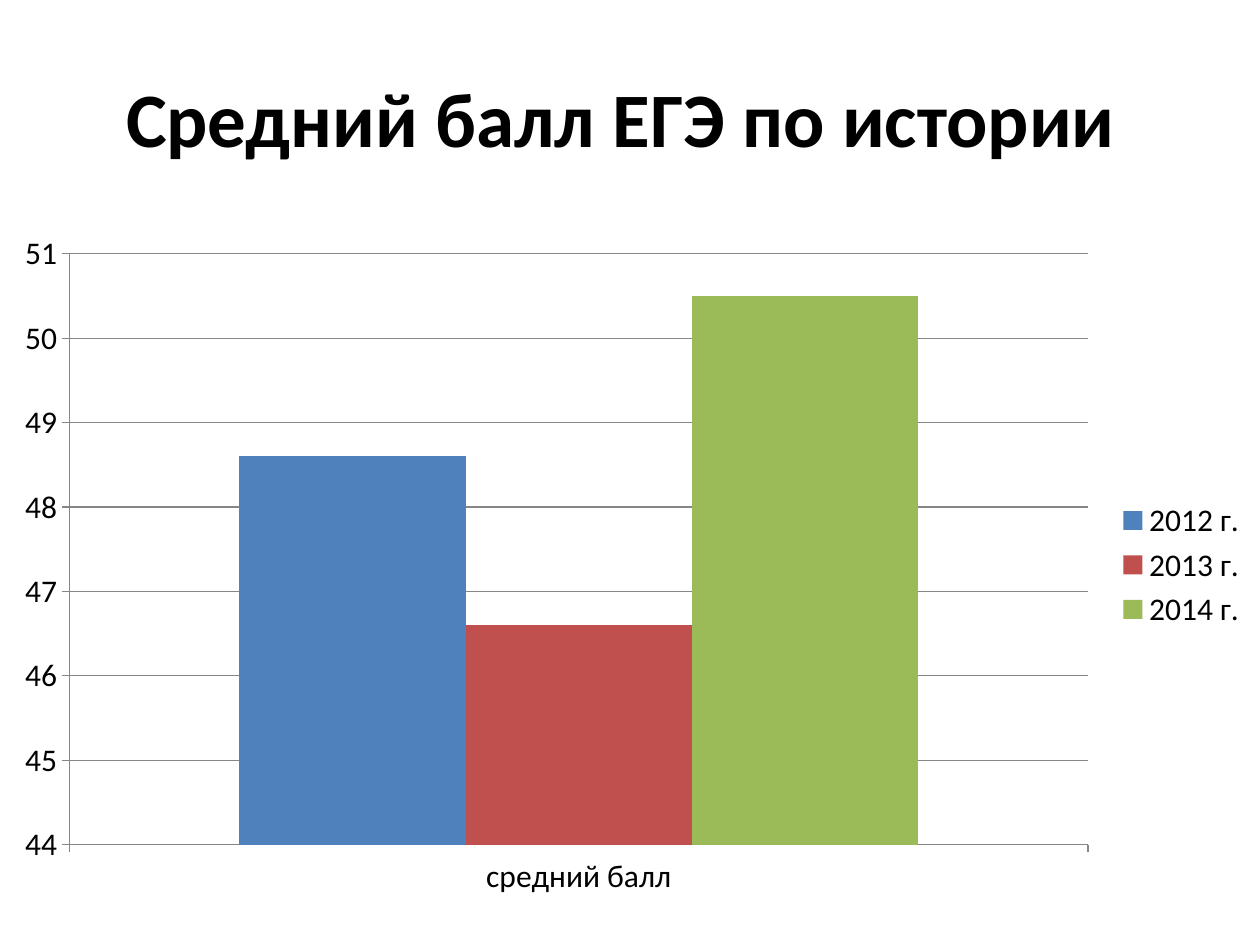
from pptx import Presentation
from pptx.chart.data import CategoryChartData
from pptx.dml.color import RGBColor
from pptx.enum.chart import XL_CHART_TYPE, XL_LEGEND_POSITION, XL_TICK_MARK
from pptx.enum.text import MSO_ANCHOR, PP_ALIGN
from pptx.util import Pt

BLACK = RGBColor(0x00, 0x00, 0x00)
GRAY = RGBColor(0x86, 0x86, 0x86)
BLUE = RGBColor(0x4F, 0x81, 0xBD)
RED = RGBColor(0xC0, 0x50, 0x4D)
GREEN = RGBColor(0x9B, 0xBB, 0x59)


def px(*lengths):
    return [round(n * 914400 / 126) for n in lengths]


def set_font(font, size, bold=False):
    for name, value in {"name": "Calibri", "size": Pt(size), "bold": bold}.items():
        setattr(font, name, value)
    font.color.rgb = BLACK


prs = Presentation()
prs.slide_width, prs.slide_height = px(1260, 945)
s = prs.slides.add_slide(prs.slide_layouts[6])

# Title
tf = s.shapes.add_textbox(*px(63, 38, 1134, 158)).text_frame
tf.word_wrap = True
tf.vertical_anchor = MSO_ANCHOR.MIDDLE
p = tf.paragraphs[0]
p.alignment = PP_ALIGN.CENTER
r = p.add_run()
r.text = "Средний балл ЕГЭ по истории "
set_font(r.font, 44, bold=True)

# Column chart of average scores
scores = [("2012 г.", 48.6, BLUE), ("2013 г.", 46.6, RED), ("2014 г.", 50.5, GREEN)]
data = CategoryChartData()
data.categories = ["средний балл"]
for year, score, _ in scores:
    data.add_series(year, [score])
chart = s.shapes.add_chart(
    XL_CHART_TYPE.COLUMN_CLUSTERED, *px(0, 221, 1260, 688), data).chart
chart.has_title = False
set_font(chart.font, 18)

plot = chart.plots[0]
plot.gap_width = 150
plot.overlap = 0
plot.vary_by_categories = False
for series, (_, _, color) in zip(plot.series, scores):
    series.format.fill.solid()
    series.format.fill.fore_color.rgb = color

# Axes and gridlines
axis = chart.value_axis
scale = {"minimum_scale": 44, "maximum_scale": 51, "major_unit": 1,
         "has_major_gridlines": True}
for name, value in scale.items():
    setattr(axis, name, value)
axis.tick_labels.number_format = "General"
axis.tick_labels.number_format_is_linked = False
for ax in (chart.category_axis, axis):
    ax.major_tick_mark = XL_TICK_MARK.OUTSIDE
for part in (chart.category_axis, axis, axis.major_gridlines):
    part.format.line.color.rgb = GRAY
    part.format.line.width = Pt(0.75)

# Legend
chart.has_legend = True
chart.legend.position = XL_LEGEND_POSITION.RIGHT
chart.legend.include_in_layout = False

prs.save("out.pptx")
